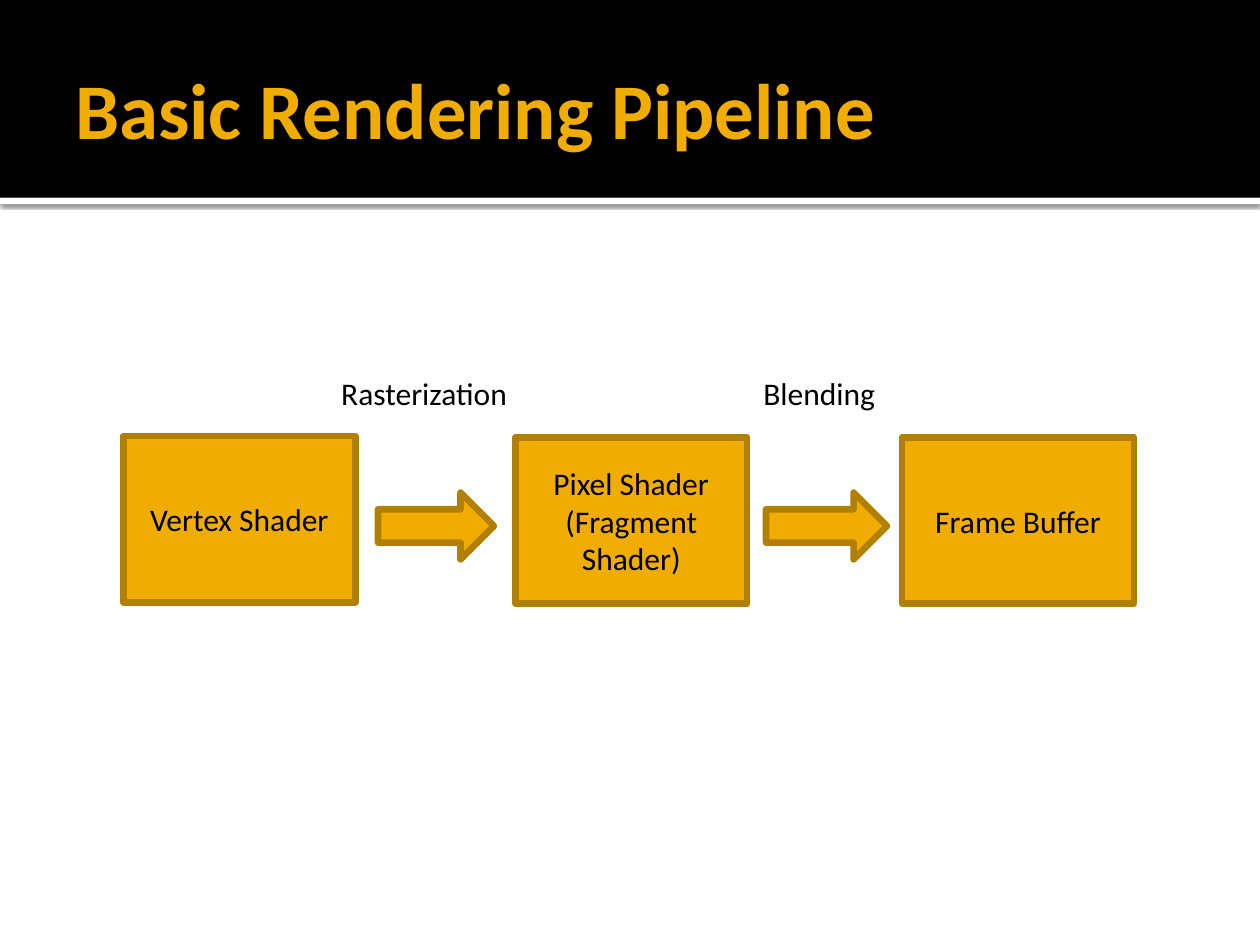
from dataclasses import dataclass
from lxml import etree
from pptx import Presentation
from pptx.dml.color import RGBColor
from pptx.enum.shapes import MSO_SHAPE
from pptx.enum.text import MSO_ANCHOR, PP_ALIGN
from pptx.oxml import parse_xml
from pptx.oxml.ns import nsdecls
from pptx.util import Inches, Pt

RECT = MSO_SHAPE.RECTANGLE
ARROW = MSO_SHAPE.RIGHT_ARROW
MIDDLE = MSO_ANCHOR.MIDDLE
TOP = MSO_ANCHOR.TOP
CENTER = PP_ALIGN.CENTER
LEFT = PP_ALIGN.LEFT


@dataclass(frozen=True)
class Theme:
    black: RGBColor = RGBColor(0, 0, 0)
    white: RGBColor = RGBColor(255, 255, 255)
    gold: RGBColor = RGBColor(0xF0, 0xAD, 0)
    edge: RGBColor = RGBColor(0xB2, 0x80, 0)
    font: str = "Calibri"
    title: float = 45
    body: float = 18
    stroke: float = 3.78


THEME = Theme()


def write(shape, lines, size, color, align, anchor, bold=False):
    frame = shape.text_frame
    frame.vertical_anchor = anchor
    for i, line in enumerate(lines):
        para = frame.paragraphs[0] if i == 0 else frame.add_paragraph()
        para.alignment = align
        run = para.add_run()
        run.text = line
        run.font.name = THEME.font
        run.font.size = Pt(size)
        run.font.bold = bold
        run.font.color.rgb = color


def block(slide, kind, box, fill, edge=None):
    shape = slide.shapes.add_shape(kind, *map(Inches, box))
    shape.shadow.inherit = False
    shape.fill.solid()
    shape.fill.fore_color.rgb = fill
    if edge is None:
        shape.line.fill.background()
    else:
        shape.line.color.rgb = edge
        shape.line.width = Pt(THEME.stroke)
    return shape


def label(slide, box, text, size, color, anchor, wrap, bold=False):
    shape = slide.shapes.add_textbox(*map(Inches, box))
    shape.text_frame.word_wrap = wrap
    write(shape, [text], size, color, LEFT, anchor, bold)
    return shape


def shade(shape):
    effect = shape._element.spPr.find("{*}effectLst")
    shadow = parse_xml(
        f'<a:outerShdw {nsdecls("a")} blurRad="{Pt(2.5)}" dist="{Pt(0.8)}" '
        'dir="5400000" algn="tl" rotWithShape="0"/>')
    tag = "{http://schemas.openxmlformats.org/drawingml/2006/main}"
    color = etree.SubElement(shadow, tag + "srgbClr", val=str(THEME.black))
    etree.SubElement(color, tag + "alpha", val="60000")
    effect.append(shadow)


def header(slide, box, title):
    x, y, w, h = box
    shade(block(slide, RECT, (x, y + h, w, 0.05), THEME.white))
    block(slide, RECT, box, THEME.black)
    area = (x + 0.5, y + 0.17, w - 1, h - 0.2)
    text = label(slide, area, title, THEME.title, THEME.gold, MIDDLE, True, True)
    text.text_frame.margin_right = Inches(0.05)


def flow(slide, box, stages, steps):
    x, y, w, h = box
    wide, high = 1.84, 1.32
    for dx, dy, lines in stages:
        area = (x + dx, y + h - high - dy, wide, high)
        shape = block(slide, RECT, area, THEME.gold, THEME.edge)
        shape.text_frame.word_wrap = True
        write(shape, lines, THEME.body, THEME.black, CENTER, MIDDLE)
    for dx, span, left, width, text in steps:
        block(slide, ARROW, (x + dx, y + 0.99, span, 0.53), THEME.gold, THEME.edge)
        area = (x + left, y, width, 0.4)
        label(slide, area, text, THEME.body, THEME.black, TOP, False)


def main():
    deck = Presentation()
    deck.slide_width, deck.slide_height = Inches(10), Inches(7.5)
    slide = deck.slides.add_slide(deck.slide_layouts[6])
    header(slide, (0, 0, 10, 1.57), "Basic Rendering Pipeline")
    stages = [
        (0, 0.01, ["Vertex Shader"]),
        (3.11, 0, ["Pixel Shader", "(Fragment Shader)"]),
        (6.18, 0, ["Frame Buffer"]),
    ]
    steps = [
        (2.02, 0.92, 1.63, 1.58, "Rasterization"),
        (5.1, 0.96, 4.98, 1.13, "Blending"),
    ]
    flow(slide, (0.98, 2.92, 8.02, 1.87), stages, steps)
    deck.save("out.pptx")


if __name__ == "__main__":
    main()
